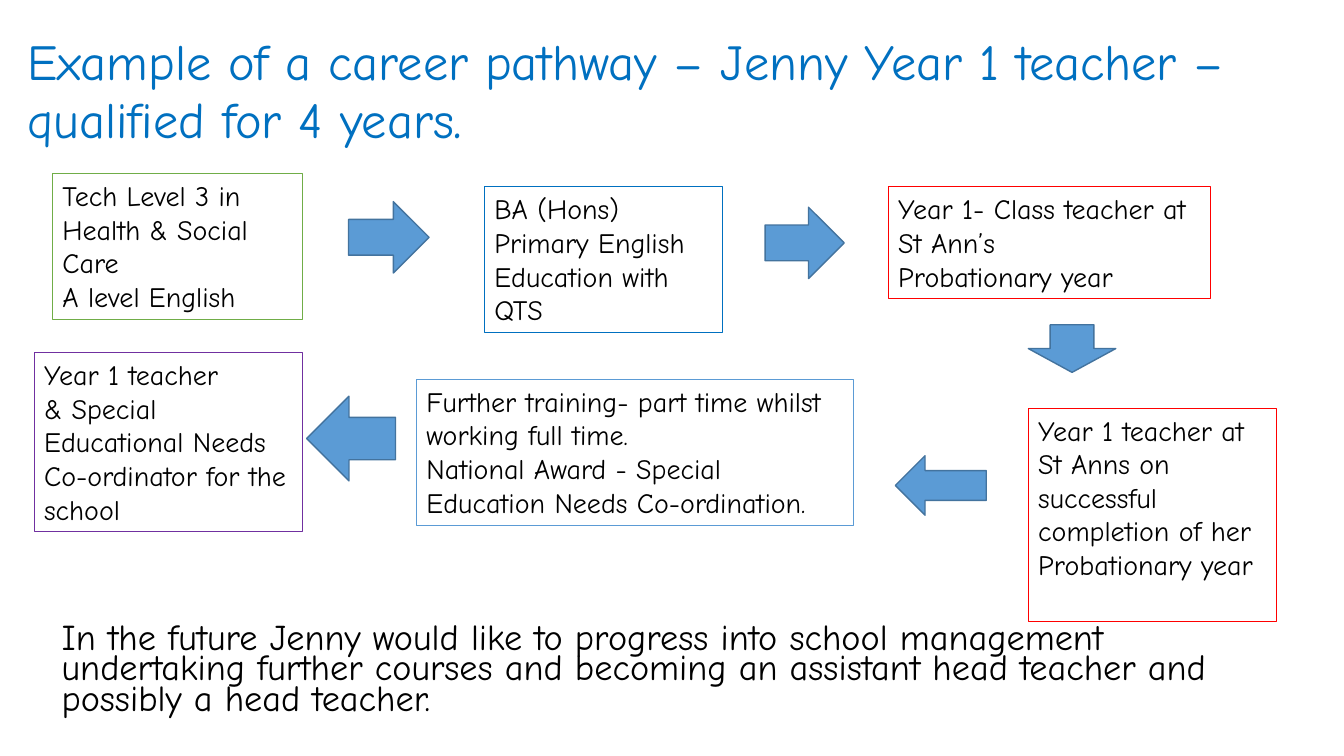
from dataclasses import dataclass

from pptx import Presentation
from pptx.dml.color import RGBColor
from pptx.enum.shapes import MSO_SHAPE
from pptx.enum.text import MSO_ANCHOR, MSO_AUTO_SIZE, PP_ALIGN
from pptx.util import Pt


@dataclass(frozen=True)
class Theme:
    font: str = "Comic Neue"
    title_size: float = 36
    title_stop_size: float = 39.6
    step_size: float = 20
    future_size: float = 25.9
    title_color: str = "0070C0"
    text_color: str = "000000"
    arrow_fill: str = "5B9BD5"
    arrow_line: str = "43739E"
    college: str = "70AD47"
    degree: str = "0070C0"
    teaching: str = "FF0000"
    training: str = "5B9BD5"
    coordinator: str = "7030A0"


THEME = Theme()

STEPS = [
    ((13, 0, 178.5, 104.5), THEME.college,
     ["Tech Level 3 in Health & Social Care", "A level English"]),
    ((321.5, 9.5, 170, 104), THEME.degree,
     ["BA (Hons) Primary English Education with QTS"]),
    ((610, 9.5, 230.5, 80), THEME.teaching,
     ["Year 1- Class teacher at St Ann’s", "Probationary year"]),
    ((710, 167.5, 177.5, 152.5), THEME.teaching,
     ["Year 1 teacher at St Anns on successful completion of her Probationary year"]),
    ((273, 147, 312, 104.5), THEME.training,
     ["Further training- part time whilst working full time.",
      "National Award - Special Education Needs Co-ordination."]),
    ((0, 128, 191.5, 128), THEME.coordinator,
     ["Year 1 teacher", "& Special Educational Needs Co-ordinator for the school"]),
]

ARROWS = [
    ((224.5, 20, 57.5, 51), MSO_SHAPE.RIGHT_ARROW, 0),
    ((522, 24, 56.5, 51), MSO_SHAPE.RIGHT_ARROW, 0),
    ((710, 108, 62.5, 34), MSO_SHAPE.DOWN_ARROW, 0),
    ((615, 201.5, 65, 42.5), MSO_SHAPE.RIGHT_ARROW, 180),
    ((194.5, 159, 63.5, 60.5), MSO_SHAPE.RIGHT_ARROW, 180),
]


def points(box):
    return [Pt(value) for value in box]


def inside(region, box):
    return region[0] + box[0], region[1] + box[1], box[2], box[3]


def add_run(paragraph, text, size, color):
    run = paragraph.add_run()
    run.text = text
    run.font.name = THEME.font
    run.font.size = Pt(size)
    run.font.color.rgb = RGBColor.from_string(color)


def add_text(slide, box, lines, size):
    shape = slide.shapes.add_textbox(*points(box))
    frame = shape.text_frame
    frame.word_wrap = True
    frame.auto_size = MSO_AUTO_SIZE.NONE
    for index, line in enumerate(lines):
        paragraph = frame.add_paragraph() if index else frame.paragraphs[0]
        add_run(paragraph, line, size, THEME.text_color)
    return shape


def add_title(slide, box):
    title = slide.shapes.title
    title.left, title.top, title.width, title.height = points(box)
    frame = title.text_frame
    frame.word_wrap = True
    frame.auto_size = MSO_AUTO_SIZE.NONE
    frame.vertical_anchor = MSO_ANCHOR.MIDDLE
    paragraph = frame.paragraphs[0]
    paragraph.alignment = PP_ALIGN.LEFT
    paragraph.line_spacing = 0.9
    add_run(paragraph,
            "Example of a career pathway – Jenny Year 1 teacher – qualified for 4 years",
            THEME.title_size, THEME.title_color)
    add_run(paragraph, ".", THEME.title_stop_size, THEME.title_color)


def add_arrow(slide, box, kind, rotation):
    arrow = slide.shapes.add_shape(kind, *points(box))
    arrow.rotation = rotation
    arrow.shadow.inherit = False
    arrow.fill.solid()
    arrow.fill.fore_color.rgb = RGBColor.from_string(THEME.arrow_fill)
    arrow.line.color.rgb = RGBColor.from_string(THEME.arrow_line)
    arrow.line.width = Pt(1)


def add_pathway(slide, region):
    for box, color, lines in STEPS:
        step = add_text(slide, inside(region, box), lines, THEME.step_size)
        step.line.color.rgb = RGBColor.from_string(color)
        step.line.width = Pt(0.75)
    for box, kind, rotation in ARROWS:
        add_arrow(slide, inside(region, box), kind, rotation)


def add_future(slide, box):
    shape = add_text(slide, box, [
        "In the future Jenny would like to progress into school management "
        "undertaking further courses and becoming an assistant head teacher "
        "and possibly a head teacher."], THEME.future_size)
    paragraph = shape.text_frame.paragraphs[0]
    paragraph.line_spacing = 0.7
    paragraph.space_before = Pt(10)


def main():
    presentation = Presentation()
    presentation.slide_width = Pt(960)
    presentation.slide_height = Pt(540)
    slide = presentation.slides.add_slide(presentation.slide_layouts[5])
    add_title(slide, (12.5, 29, 924, 76))
    add_pathway(slide, (24.5, 124, 888, 320))
    add_future(slide, (37, 443.5, 867, 78))
    presentation.save("out.pptx")


if __name__ == "__main__":
    main()
